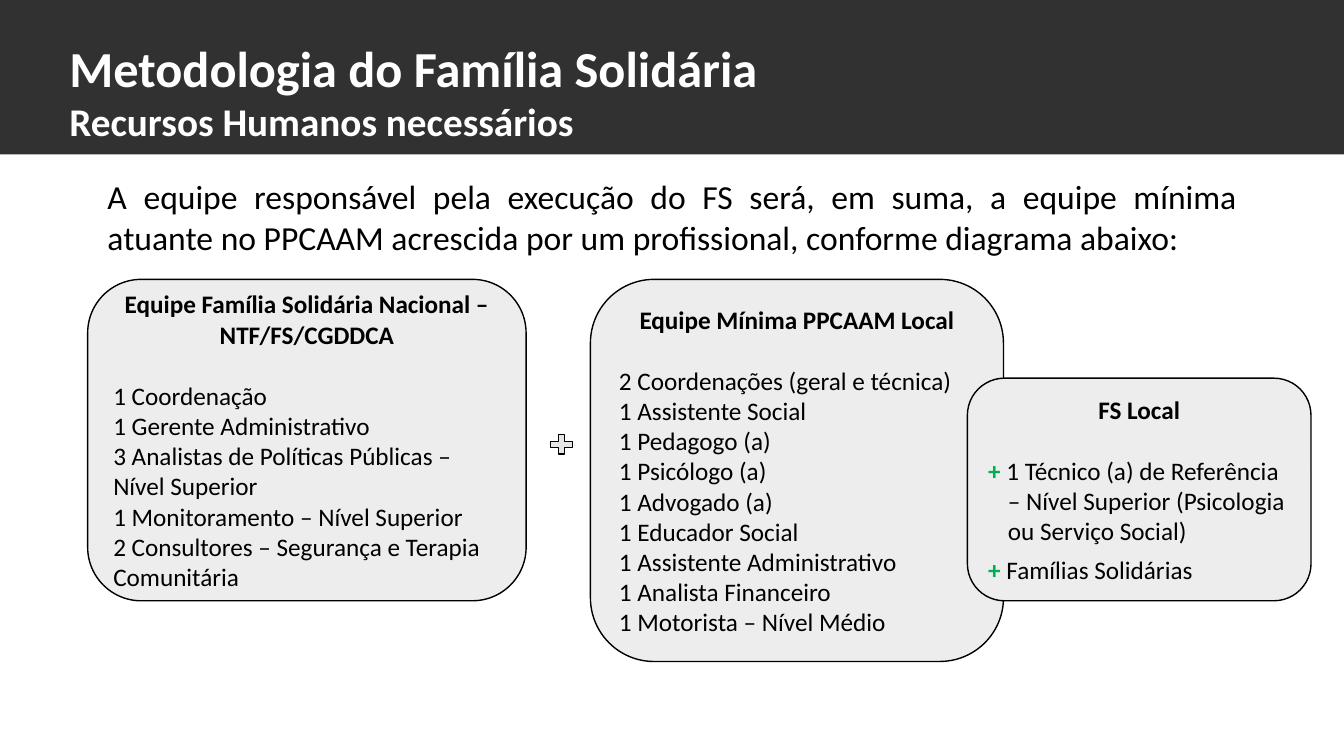
from dataclasses import dataclass

from pptx import Presentation
from pptx.dml.color import RGBColor
from pptx.enum.shapes import MSO_SHAPE
from pptx.enum.text import MSO_ANCHOR, PP_ALIGN
from pptx.util import Cm, Pt


@dataclass(frozen=True)
class Theme:
    font: str = "Calibri"
    banner: str = "313132"
    light: str = "FFFFFF"
    ink: str = "000000"
    card: str = "EDEDED"
    plus: str = "E7E6E6"
    accent: str = "00B050"
    title: int = 36
    subtitle: int = 28
    intro: int = 24
    body: int = 18
    heading_gap: int = 22
    item_gap: int = 6


THEME = Theme()

NATIONAL_TEAM = [
    "1 Coordenação",
    "1 Gerente Administrativo",
    "3 Analistas de Políticas Públicas – Nível Superior",
    "1 Monitoramento – Nível Superior",
    "2 Consultores – Segurança e Terapia Comunitária",
]
LOCAL_TEAM = [
    "2 Coordenações (geral e técnica)",
    "1 Assistente Social",
    "1 Pedagogo (a)",
    "1 Psicólogo (a)",
    "1 Advogado (a)",
    "1 Educador Social",
    "1 Assistente Administrativo",
    "1 Analista Financeiro",
    "1 Motorista – Nível Médio",
]
ADDITIONS = [
    " 1 Técnico (a) de Referência – Nível Superior (Psicologia ou Serviço Social)",
    " Famílias Solidárias",
]


def add_run(paragraph, text, size=THEME.body, color=THEME.ink, bold=False):
    run = paragraph.add_run()
    run.text = text
    run.font.name = THEME.font
    run.font.size = Pt(size)
    run.font.bold = bold
    run.font.color.rgb = RGBColor.from_string(color)


def add_paragraph(frame, align=PP_ALIGN.LEFT):
    """Use the empty first paragraph, then append new ones."""
    first = frame.paragraphs[0]
    paragraph = frame.add_paragraph() if first.runs else first
    paragraph.alignment = align
    return paragraph


def add_block(slide, preset, box, fill, outlined=True):
    block = slide.shapes.add_shape(preset, *map(Cm, box))
    block.shadow.inherit = False
    block.fill.solid()
    block.fill.fore_color.rgb = RGBColor.from_string(fill)
    if outlined:
        block.line.color.rgb = RGBColor.from_string(THEME.ink)
        block.line.width = Pt(1)
    else:
        block.line.fill.background()
    return block


def add_text_area(slide, box, wrap):
    frame = slide.shapes.add_textbox(*map(Cm, box)).text_frame
    frame.word_wrap = wrap
    return frame


def add_team_card(slide, box, heading, members=()):
    frame = add_block(slide, MSO_SHAPE.ROUNDED_RECTANGLE, box, THEME.card).text_frame
    frame.word_wrap = True
    frame.vertical_anchor = MSO_ANCHOR.MIDDLE
    title = add_paragraph(frame, PP_ALIGN.CENTER)
    title.space_after = Pt(THEME.heading_gap)
    add_run(title, heading, bold=True)
    for member in members:
        add_run(add_paragraph(frame), member)
    return frame


def add_plus_item(frame, text, last):
    item = add_paragraph(frame)
    properties = item._p.get_or_add_pPr()
    properties.set("marL", str(Cm(0.5)))
    properties.set("indent", str(-Cm(0.5)))
    if not last:
        item.space_after = Pt(THEME.item_gap)
    add_run(item, "+", color=THEME.accent, bold=True)
    add_run(item, text)


def main():
    deck = Presentation()
    deck.slide_width, deck.slide_height = Cm(33.87), Cm(19.05)
    slide = deck.slides.add_slide(deck.slide_layouts[6])

    # Title banner
    add_block(slide, MSO_SHAPE.RECTANGLE, (0, 0, 33.87, 3.89), THEME.banner, outlined=False)
    banner = add_text_area(slide, (1.5, 0.81, 18.06, 3), wrap=False)
    for text, size in (
        ("Metodologia do Família Solidária", THEME.title),
        ("Recursos Humanos necessários", THEME.subtitle),
    ):
        add_run(add_paragraph(banner), text, size, THEME.light, bold=True)

    # Introduction
    intro = add_text_area(slide, (2.46, 4.32, 28.96, 2.31), wrap=True)
    add_run(
        add_paragraph(intro, PP_ALIGN.JUSTIFY),
        "A equipe responsável pela execução do FS será, em suma, a equipe mínima "
        "atuante no PPCAAM acrescida por um profissional, conforme diagrama abaixo:",
        THEME.intro,
    )

    # Teams, with the local addition overlapping the local team
    add_team_card(slide, (14.88, 7.04, 10.41, 9.63), "Equipe Mínima PPCAAM Local", LOCAL_TEAM)
    add_team_card(
        slide, (2.21, 7.04, 11.05, 8.1),
        "Equipe Família Solidária Nacional – NTF/FS/CGDDCA", NATIONAL_TEAM,
    )
    addition = add_team_card(slide, (24.38, 9.53, 8.66, 5.61), "FS Local")
    for text in ADDITIONS:
        add_plus_item(addition, text, last=text == ADDITIONS[-1])

    # Plus sign between the teams
    add_block(slide, MSO_SHAPE.MATH_PLUS, (13.77, 10.87, 0.76, 0.66), THEME.plus)

    deck.save("out.pptx")


if __name__ == "__main__":
    main()
